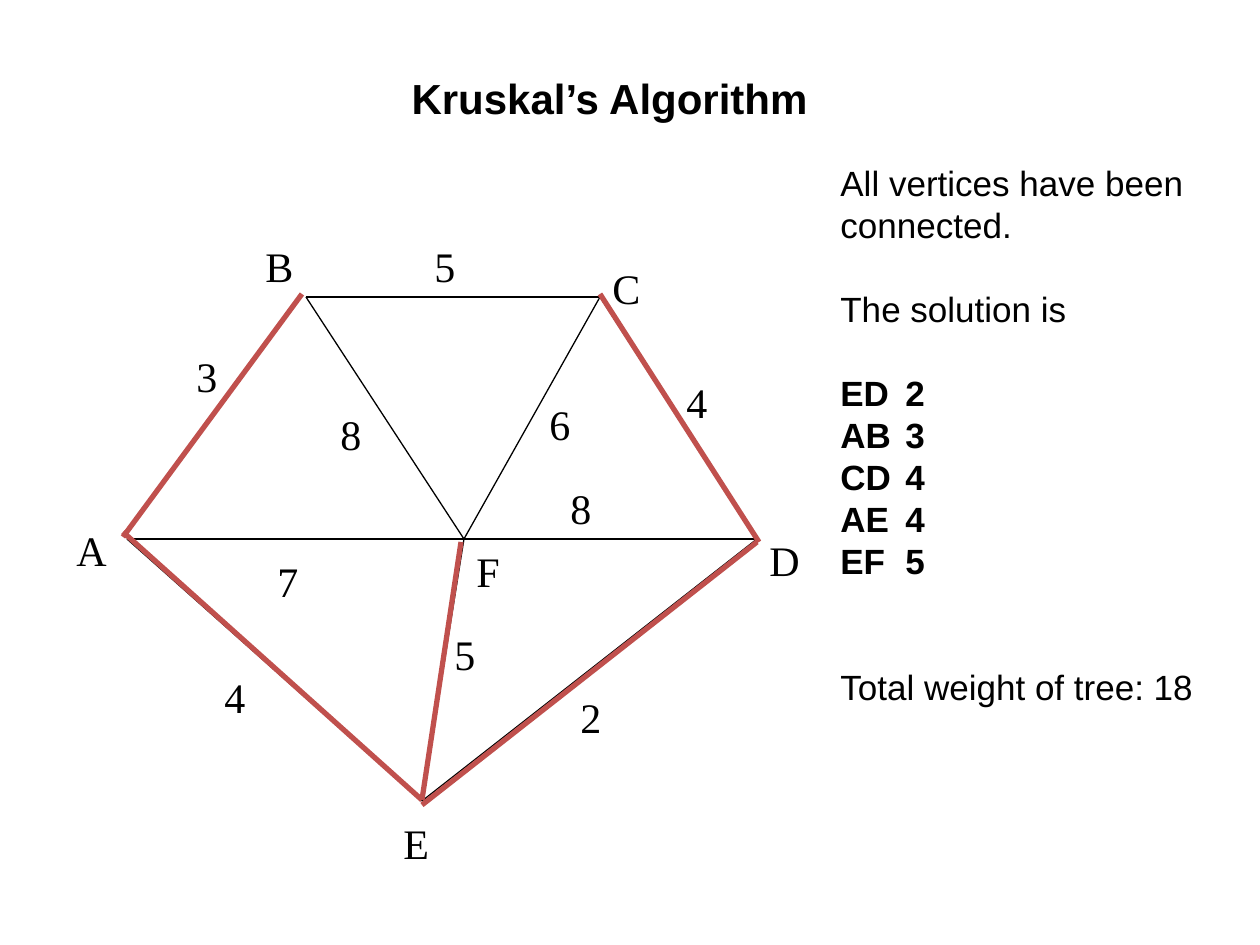
from dataclasses import dataclass

from lxml.etree import SubElement
from pptx import Presentation
from pptx.dml.color import RGBColor
from pptx.enum.shapes import MSO_CONNECTOR
from pptx.enum.text import MSO_ANCHOR, MSO_AUTO_SIZE, PP_ALIGN
from pptx.oxml.ns import qn
from pptx.util import Emu, Pt


@dataclass(frozen=True)
class Theme:
    ink: RGBColor = RGBColor(0, 0, 0)
    tree: RGBColor = RGBColor(0xC0, 0x50, 0x4D)
    sans: str = "Arial"
    serif: str = "Times New Roman"
    title_size: int = 24
    label_size: int = 24
    body_size: int = 20
    body_leading: int = 24
    edge_width: float = 0.75
    tree_width: float = 3


THEME = Theme()
PX_PER_INCH = 126
LABEL_SIZE = 63
WEIGHT_TAB = 65

VERTICES = {
    "A": (127, 539), "B": (306, 297), "C": (600, 297),
    "D": (757, 539), "E": (422, 801), "F": (464, 539),
}
PLAIN_EDGES = ["BC", "CD", "AF", "FD", "BF", "FC", "AE", "EF", "ED"]
TREE_EDGES = [
    ((123, 537), (302, 294)),  # AB
    ((422, 805), (757, 542)),  # ED
    ((600, 294), (759, 542)),  # CD
    ((123, 532), (422, 800)),  # AE
    ((461, 542), (422, 800)),  # EF
]
LABELS = [
    ("A", 64, 518), ("F", 464, 539), ("B", 253, 234),
    ("C", 600, 256), ("D", 757, 528), ("E", 391, 811),
    ("2", 568, 685), ("7", 265, 549), ("4", 212, 665), ("5", 442, 622),
    ("8", 328, 402), ("6", 537, 392), ("4", 674, 370), ("5", 422, 234),
    ("3", 184, 344), ("8", 558, 476),
]
# Text, bold, lines of space before
SOLUTION = [
    ("All vertices have been", False, 0),
    ("connected.", False, 0),
    ("The solution is", False, 1),
    ("ED\t2", True, 1),
    ("AB\t3", True, 0),
    ("CD\t4", True, 0),
    ("AE\t4", True, 0),
    ("EF\t5", True, 0),
    ("Total weight of tree: 18", False, 2),
]


def px(length):
    return Emu(round(length * 914400 / PX_PER_INCH))


def add_run(paragraph, text, font_name, size, bold=False):
    run = paragraph.add_run()
    run.text = text
    run.font.name = font_name
    run.font.size = Pt(size)
    run.font.bold = bold
    run.font.color.rgb = THEME.ink


def add_frame(slide, left, top, width, height):
    box = slide.shapes.add_textbox(px(left), px(top), px(width), px(height))
    box.text_frame.word_wrap = True
    return box.text_frame


def add_title(slide, text):
    title = slide.shapes.title
    title.left, title.top, title.width, title.height = map(px, (113, 66, 993, 63))
    frame = title.text_frame
    frame.auto_size = MSO_AUTO_SIZE.NONE
    frame.vertical_anchor = MSO_ANCHOR.TOP
    frame.paragraphs[0].alignment = PP_ALIGN.CENTER
    add_run(frame.paragraphs[0], text, THEME.sans, THEME.title_size, bold=True)


def add_edge(slide, start, end, color, width):
    edge = slide.shapes.add_connector(
        MSO_CONNECTOR.STRAIGHT, *map(px, (*start, *end)))
    edge.line.color.rgb = color
    edge.line.width = Pt(width)
    SubElement(edge.element.spPr, qn("a:effectLst"))


def add_label(slide, text, left, top):
    frame = add_frame(slide, left, top, LABEL_SIZE, LABEL_SIZE)
    add_run(frame.paragraphs[0], text, THEME.serif, THEME.label_size)


def add_weight_tab(paragraph):
    """Line up the edge weights at one tab stop."""
    tabs = SubElement(paragraph._p.get_or_add_pPr(), qn("a:tabLst"))
    SubElement(tabs, qn("a:tab"), pos=str(px(WEIGHT_TAB)), algn="l")


def add_solution(slide):
    frame = add_frame(slide, 828, 155, 397, 601)
    for index, (text, bold, lines_before) in enumerate(SOLUTION):
        paragraph = frame.add_paragraph() if index else frame.paragraphs[0]
        if "\t" in text:
            add_weight_tab(paragraph)
        paragraph.line_spacing = Pt(THEME.body_leading)
        if lines_before:
            paragraph.space_before = Pt(lines_before * THEME.body_leading)
        add_run(paragraph, text, THEME.sans, THEME.body_size, bold)


def main():
    presentation = Presentation()
    presentation.slide_width = px(1260)
    presentation.slide_height = px(945)
    slide = presentation.slides.add_slide(presentation.slide_layouts[5])

    add_solution(slide)
    add_title(slide, "Kruskal’s Algorithm")
    for start, end in PLAIN_EDGES:
        add_edge(slide, VERTICES[start], VERTICES[end], THEME.ink, THEME.edge_width)
    for label in LABELS:
        add_label(slide, *label)
    for start, end in TREE_EDGES:
        add_edge(slide, start, end, THEME.tree, THEME.tree_width)

    presentation.save("out.pptx")


if __name__ == "__main__":
    main()
